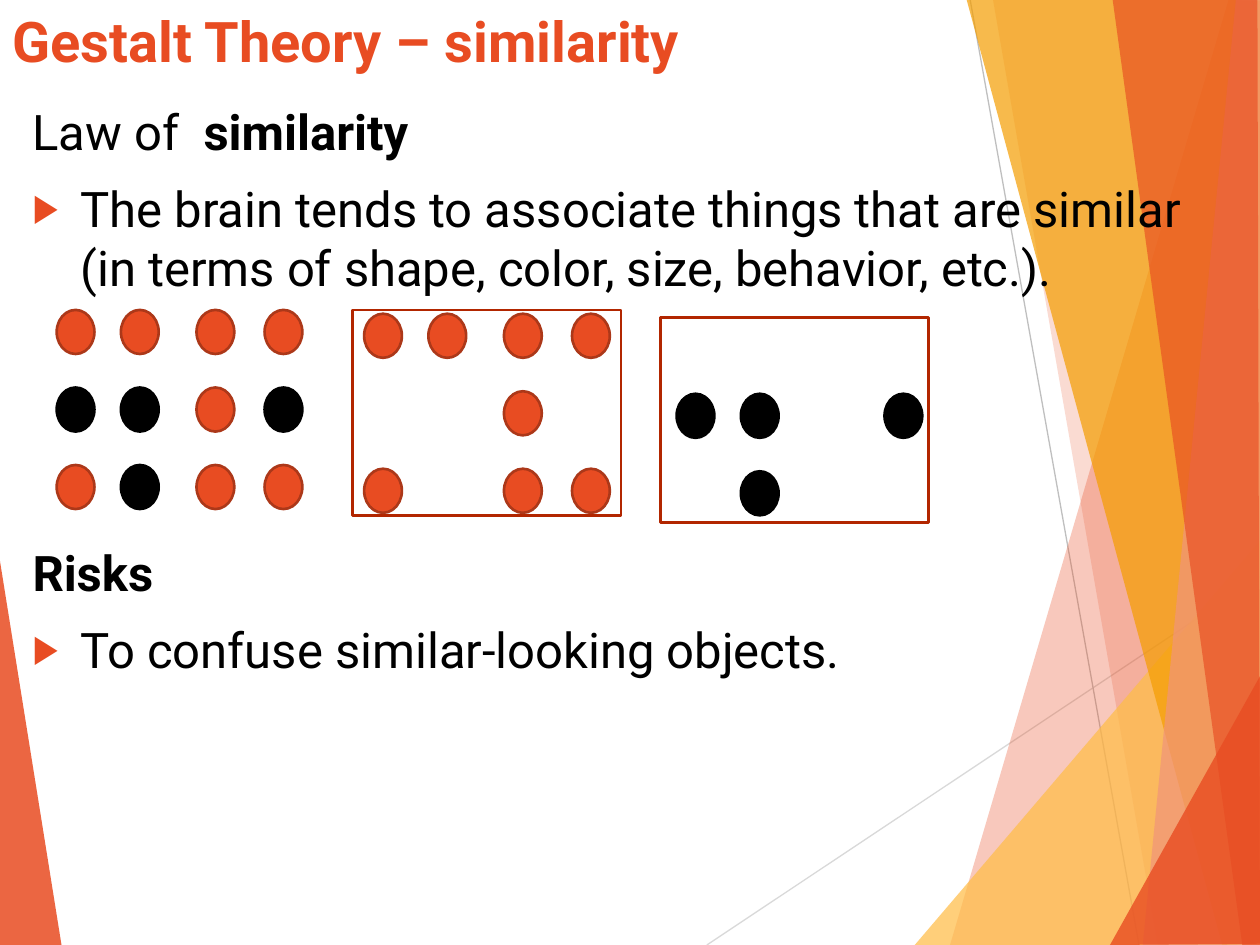
from pptx import Presentation
from pptx.dml.color import RGBColor
from pptx.enum import shapes, text
from pptx.oxml import ns
from pptx.util import Inches, Pt
from lxml import etree

RED, BLACK, WHITE, EDGE = "E84C22", "000000", "FFFFFF", "B22600"
TITLE = [[("Gestalt Theory – similarity", True)]]
LAW = [
    [("Law of  ", False), ("similarity", True)],
    "The brain tends to associate things that are similar "
    "(in terms of shape, color, size, behavior, etc.).",
]
RISKS = [[("Risks", True)], "To confuse similar-looking objects."]
BOXES = [
    (TITLE, (0, 0, 10, 0.95), 32, RED),
    (LAW, (0.16, 0.76, 9.65, 1.65), 28, BLACK),
    (RISKS, (0.16, 4.26, 9.65, 1.2), 28, BLACK),
]
WEDGE = (RED, 85, [(-0.01, 4.39), (0.49, 7.51), (-0.01, 7.5)])
RAYS = [
    ("D9D9D9", (5.61, 7.5, 10.01, 4.57)),
    ("BFBFBF", (7.7, 0, 9.04, 7.5)),
]
FACETS = [
    (RED, 30, [(9.75, 0), (7.54, 7.5), (10.02, 7.51), (10.01, 0.01)]),
    (RED, 20, [(7.88, -0.01), (9.19, 7.5), (10.01, 7.5), (10.01, -0.01)]),
    ("FFBD47", 72, [(7.26, 7.5), (10, 4.29), (10.01, 7.5)]),
    ("F49D00", 70, [(7.67, -0.01), (9.7, 7.5), (10.01, 7.49), (10.01, -0.01)]),
    ("F1947A", 70, [(9.81, -0.01), (9.07, 7.5), (10.01, 7.5), (10, -0.01)]),
    (RED, 65, [(8.83, -0.01), (9.86, 7.5), (10, 7.5), (9.98, -0.01)]),
    (RED, 80, [(8.81, 7.5), (10.01, 5.35), (10.01, 7.49)]),
]
FRAMES = [(5.24, 2.52, 2.13, 1.63), (2.8, 2.46, 2.13, 1.63)]
COLS = [0, 0.51, 1.11, 1.65]
STEP = 0.615
DOTS = {"r": (RED, "AC3819"), "b": (BLACK, BLACK)}
GRIDS = [
    (0.45, 2.46, ["rrrr", "bbrb", "rbrr"]),
    (2.89, 2.49, ["rrrr", "  r ", "r rr"]),
    (5.37, 2.51, ["    ", "bb b", " b  "]),
]


def color(code):
    return RGBColor.from_string(code)


def add(node, tag, **vals):
    return etree.SubElement(node, ns.qn(tag), vals)


def draw(kind, box, fill, edge):
    part = slide.shapes.add_shape(kind, *map(Inches, box))
    part.shadow.inherit = False
    part.fill.solid()
    part.fill.fore_color.rgb = color(fill)
    part.line.color.rgb = color(edge)
    part.line.width = Pt(1.5)


def facet(fill, alpha, points):
    spots = [(Inches(x), Inches(y)) for x, y in points]
    form = slide.shapes.build_freeform(*spots[0])
    form.add_line_segments(spots[1:], close=True)
    part = form.convert_to_shape()
    part.shadow.inherit = False
    part.line.fill.background()
    part.fill.solid()
    part.fill.fore_color.rgb = color(fill)
    tint = part.fill._xPr.find(".//" + ns.qn("a:srgbClr"))
    add(tint, "a:alpha", val=str(alpha * 1000))


def ray(hue, ends):
    line = slide.shapes.add_connector(
        shapes.MSO_CONNECTOR.STRAIGHT, *map(Inches, ends))
    line.line.color.rgb = color(hue)
    line.line.width = Pt(0.75)
    add(line._element.spPr, "a:effectLst")


def bullet(para):
    props = para._p.get_or_add_pPr()
    props.set("marL", str(Inches(0.38)))
    props.set("indent", str(-Inches(0.38)))
    add(add(props, "a:buClr"), "a:srgbClr", val=RED)
    add(props, "a:buSzPct", val="80000")
    add(props, "a:buFont", typeface="Arial")
    add(props, "a:buChar", char="▶")


def write(paras, box, size, hue):
    frame = slide.shapes.add_textbox(*map(Inches, box)).text_frame
    frame.word_wrap = True
    frame.vertical_anchor = text.MSO_ANCHOR.TOP
    for i, item in enumerate(paras):
        para = frame.add_paragraph() if i else frame.paragraphs[0]
        if i:
            para.space_before = Pt(10)
        if isinstance(item, str):
            bullet(para)
            item = [(item, False)]
        for words, bold in item:
            run = para.add_run()
            run.text = words
            look = {"name": "Roboto", "size": Pt(size), "bold": bold}
            for key, val in look.items():
                setattr(run.font, key, val)
            run.font.color.rgb = color(hue)


deck = Presentation()
deck.slide_width, deck.slide_height = Inches(10), Inches(7.5)
slide = deck.slides.add_slide(deck.slide_layouts[6])

facet(*WEDGE)
for item in RAYS:
    ray(*item)
for item in FACETS:
    facet(*item)
for box in FRAMES:
    draw(shapes.MSO_SHAPE.RECTANGLE, box, WHITE, EDGE)
for item in BOXES:
    write(*item)
for left, top, rows in GRIDS:
    for r, row in enumerate(rows):
        for dx, mark in zip(COLS, row):
            if mark in DOTS:
                box = (left + dx, top + r * STEP, 0.3, 0.35)
                draw(shapes.MSO_SHAPE.OVAL, box, *DOTS[mark])

deck.save("out.pptx")
